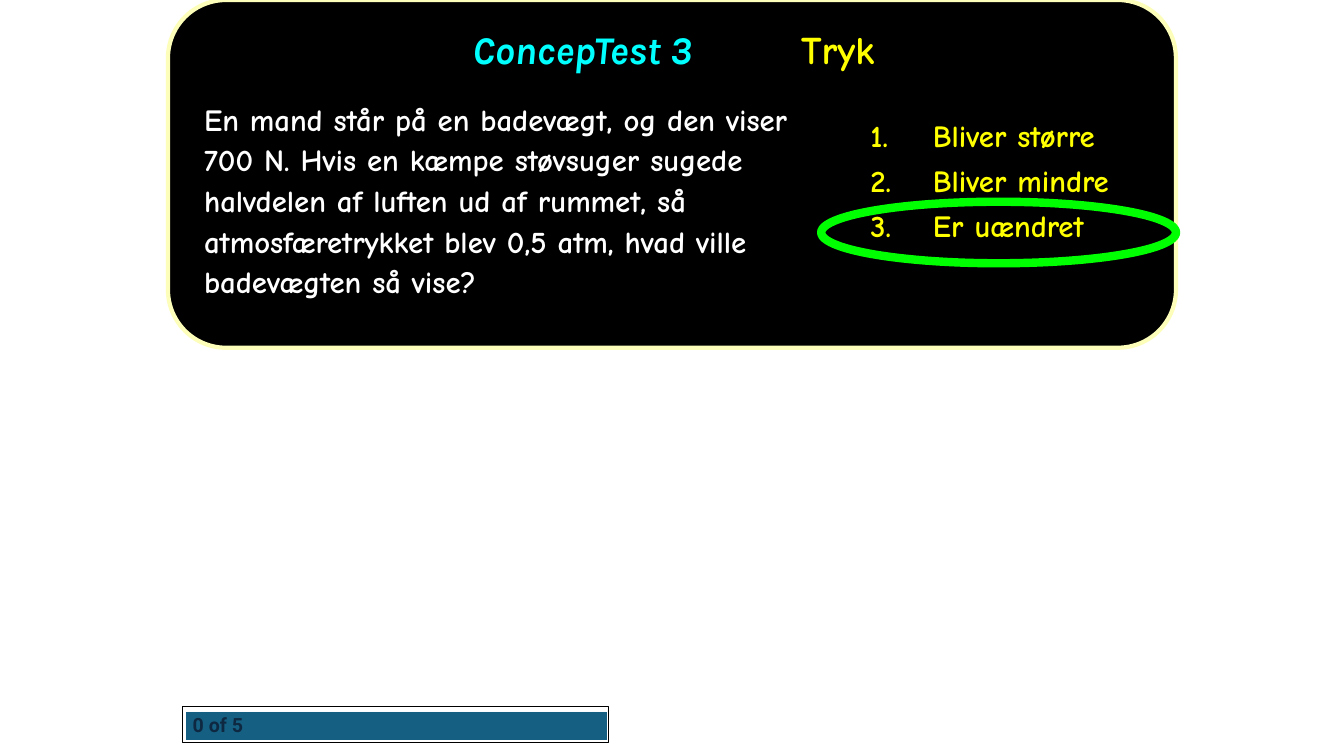
import pptx
import pptx.util
import pptx.dml.color
import pptx.enum.dml
import pptx.enum.shapes
import pptx.enum.text
import pptx.oxml.ns
from lxml import etree

W, H = 13.33, 7.5
HAND = "Comic Neue"
KIND = pptx.enum.shapes.MSO_SHAPE
inch = pptx.util.Inches


def color(code):
    return pptx.dml.color.RGBColor.from_string(code)


def part(box, rel):
    """Turn shares of a box into a box in inches."""
    x, y, w, h = box
    return x + rel[0] * w, y + rel[1] * h, rel[2] * w, rel[3] * h


def draw(shapes, kind, box, fill=None, line=None, width=1):
    shape = shapes.add_shape(kind, *map(inch, box))
    shape.shadow.inherit = False
    if fill:
        shape.fill.solid()
        shape.fill.fore_color.rgb = color(fill)
    else:
        shape.fill.background()
    if line:
        shape.line.color.rgb = color(line)
        shape.line.width = pptx.util.Pt(width)
    else:
        shape.line.fill.background()
    return shape


def label(shapes, box):
    frame = shapes.add_textbox(*map(inch, box)).text_frame
    frame.word_wrap = True
    return frame


def write(para, text, size=22, font=HAND, ink="FFFFFF", italic=False):
    run = para.add_run()
    run.text = text
    run.font.size = pptx.util.Pt(size)
    run.font.name = font
    run.font.bold = True
    run.font.italic = italic
    run.font.color.rgb = color(ink)


def add(node, tag, **attrs):
    return etree.SubElement(node, pptx.oxml.ns.qn(tag), **attrs)


def title(shapes, box, topic, gap):
    frame = label(shapes, box)
    frame.vertical_anchor = pptx.enum.text.MSO_ANCHOR.MIDDLE
    frame.margin_left = inch(box[2] * 0.28)
    para = frame.paragraphs[0]
    tabs = add(para._p.get_or_add_pPr(), "a:tabLst")
    add(tabs, "a:tab", pos=str(inch(gap)), algn="l")
    para.line_spacing = 0.9
    write(para, "ConcepTest 3\t", size=28, font="Karla", ink="00FFFF", italic=True)
    write(para, topic, size=28, ink="FFFF00")


def answers(shapes, box, items):
    frame = label(shapes, box)
    for i, item in enumerate(items):
        para = frame.add_paragraph() if i else frame.paragraphs[0]
        props = para._p.get_or_add_pPr()
        props.set("marL", str(inch(0.62)))
        props.set("indent", str(inch(-0.62)))
        add(props, "a:buFont", typeface="+mj-lt")
        add(props, "a:buAutoNum", type="arabicPeriod")
        para.line_spacing = 0.8
        if i:
            para.space_before = pptx.util.Pt(11)
        write(para, item, ink="FFFF00")


def panel(shapes, box):
    # Rounded board
    board = draw(shapes, KIND.ROUNDED_RECTANGLE, box, "000000", "FCFEB9", 3)
    board.adjustments[0] = 0.167

    title(shapes, part(box, (0.05, 0.05, 0.9, 0.2)), "Tryk", 3.26)

    # Question
    frame = label(shapes, part(box, (0.026, 0.264, 0.647, 0.61)))
    para = frame.paragraphs[0]
    para.line_spacing = 1.1
    write(para, "En mand står på en badevægt, og den viser 700 N. "
                "Hvis en kæmpe støvsuger sugede halvdelen af luften ud af rummet, "
                "så atmosfæretrykket blev 0,5 atm, hvad ville badevægten så vise?")

    # Choices, with a ring round the right one
    answers(shapes, part(box, (0.687, 0.342, 0.312, 0.614)),
            ["Bliver større", "Bliver mindre", "Er uændret"])
    draw(shapes, KIND.OVAL, part(box, (0.648, 0.58, 0.352, 0.177)),
         line="00FF00", width=6)


def counter(shapes, box, text):
    group = shapes.add_group_shape().shapes
    # Striped bar
    bar = draw(group, KIND.RECTANGLE, part(box, (0.005, 0.14, 0.99, 0.8)))
    bar.fill.patterned()
    bar.fill.pattern = pptx.enum.dml.MSO_PATTERN.DARK_VERTICAL
    bar.fill.fore_color.rgb = color("156082")
    bar.fill.back_color.rgb = color("FFFFFF")
    # Frame with the count
    frame = draw(group, KIND.RECTANGLE, box, line="000000", width=0.75).text_frame
    frame.word_wrap = False
    frame.vertical_anchor = pptx.enum.text.MSO_ANCHOR.MIDDLE
    para = frame.paragraphs[0]
    para.alignment = pptx.enum.text.PP_ALIGN.LEFT
    write(para, text, size=14, font="Roboto", ink="0E2841")


def main():
    deck = pptx.Presentation()
    deck.slide_width, deck.slide_height = inch(W), inch(H)
    shapes = deck.slides.add_slide(deck.slide_layouts[6]).shapes
    page = (0, 0, W, H)
    panel(shapes, part(page, (0.125, 0, 0.75, 0.46)))
    counter(shapes, part(page, (0.136, 0.935, 0.317, 0.047)), "0 of 5")
    deck.save("out.pptx")


if __name__ == "__main__":
    main()
